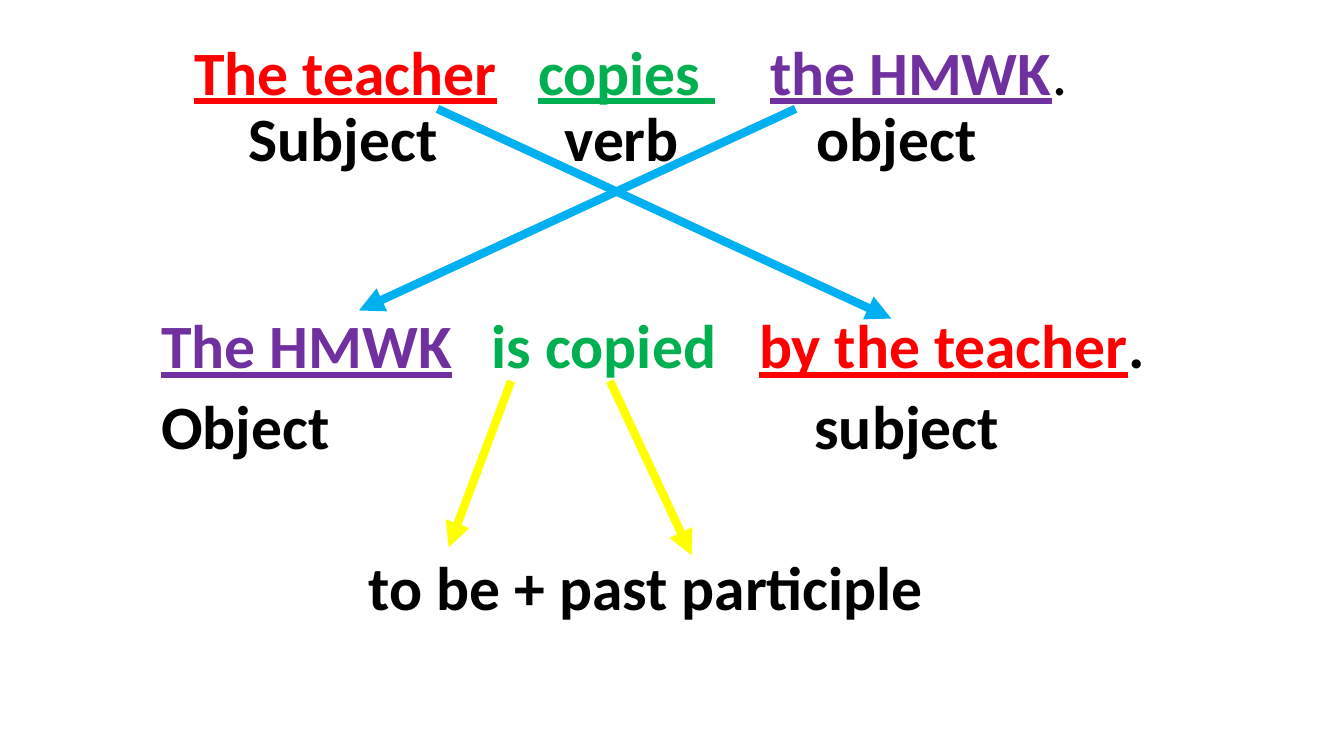
from lxml import etree
from pptx import Presentation
from pptx.dml.color import RGBColor
from pptx.enum.shapes import MSO_CONNECTOR
from pptx.enum.text import MSO_ANCHOR
from pptx.oxml.ns import qn
from pptx.util import Inches, Pt

STRAIGHT = MSO_CONNECTOR.STRAIGHT
TOP, MIDDLE = MSO_ANCHOR.TOP, MSO_ANCHOR.MIDDLE
COLORS = {"red": "FF0000", "green": "00B050", "purple": "7030A0",
          "black": "000000", "blue": "00B0F0", "yellow": "FFFF00"}

# Each line: space before in points, then (tab stop, text, colour, format).
# A tab stop of None continues straight after the previous text.
UNDERLINED = {"bold": True, "underline": True}
BOLD = {"bold": True}
ACTIVE = [
    (0, [(0, "The teacher", "red", UNDERLINED),
         (3.41, "copies ", "green", UNDERLINED),
         (5.71, "the HMWK", "purple", UNDERLINED),
         (None, ".", "black", {})]),
    (0, [(0.54, "Subject", "black", BOLD),
         (3.67, "verb", "black", BOLD),
         (6.17, "object", "black", BOLD)]),
]
PASSIVE = [
    (10, [(0, "The HMWK", "purple", UNDERLINED),
          (3.28, "is copied", "green", BOLD),
          (5.93, "by the teacher", "red", UNDERLINED),
          (None, ".", "black", BOLD)]),
    (10, [(0, "Object", "black", BOLD),
          (6.48, "subject", "black", BOLD)]),
    (68, [(2.06, "to be + past participle", "black", BOLD)]),
]
ARROWS = [
    ((5.07, 3.78), (4.45, 5.43), "yellow"),
    ((6.05, 3.78), (6.86, 5.51), "yellow"),
    ((7.89, 1.08), (3.56, 3.08), "blue"),
    ((4.34, 1.08), (8.84, 3.16), "blue"),
]


def add_run(p, text, color, formats):
    r = p.add_run()
    r.text = text
    for name, value in {"name": "Calibri", "size": Pt(44), **formats}.items():
        setattr(r.font, name, value)
    r.font.color.rgb = RGBColor.from_string(COLORS[color])


def add_tab_stops(p, stops):
    tabs = etree.SubElement(p._p.get_or_add_pPr(), qn("a:tabLst"))
    for stop in stops:
        etree.SubElement(tabs, qn("a:tab"), pos=str(Inches(stop)), algn="l")


def add_sentence(s, box, lines, anchor):
    """Add a text box whose words are aligned on tab stops."""
    tf = s.shapes.add_textbox(*map(Inches, box)).text_frame
    tf.word_wrap = True
    tf.vertical_anchor = anchor
    for i, (space, words) in enumerate(lines):
        p = tf.add_paragraph() if i else tf.paragraphs[0]
        p.line_spacing = 0.9
        p.space_before = Pt(space)
        add_tab_stops(p, [stop for stop, *_ in words if stop])
        for stop, text, color, formats in words:
            if stop:
                add_run(p, "\t", color, {})
            add_run(p, text, color, formats)


def add_arrow(s, start, end, color):
    line = s.shapes.add_connector(STRAIGHT, *map(Inches, start + end))
    line.line.width = Pt(6)
    line.line.color.rgb = RGBColor.from_string(COLORS[color])
    etree.SubElement(line.line._get_or_add_ln(), qn("a:tailEnd"), type="triangle")
    etree.SubElement(line._element.spPr, qn("a:effectLst"))


def main():
    prs = Presentation()
    prs.slide_width, prs.slide_height = Inches(13.33), Inches(7.5)
    s = prs.slides.add_slide(prs.slide_layouts[6])
    add_sentence(s, (1.83, 0.35, 11.5, 1.45), ACTIVE, MIDDLE)
    add_sentence(s, (1.5, 3.08, 11.5, 3.73), PASSIVE, TOP)
    for start, end, color in ARROWS:
        add_arrow(s, start, end, color)
    prs.save("out.pptx")


if __name__ == "__main__":
    main()
